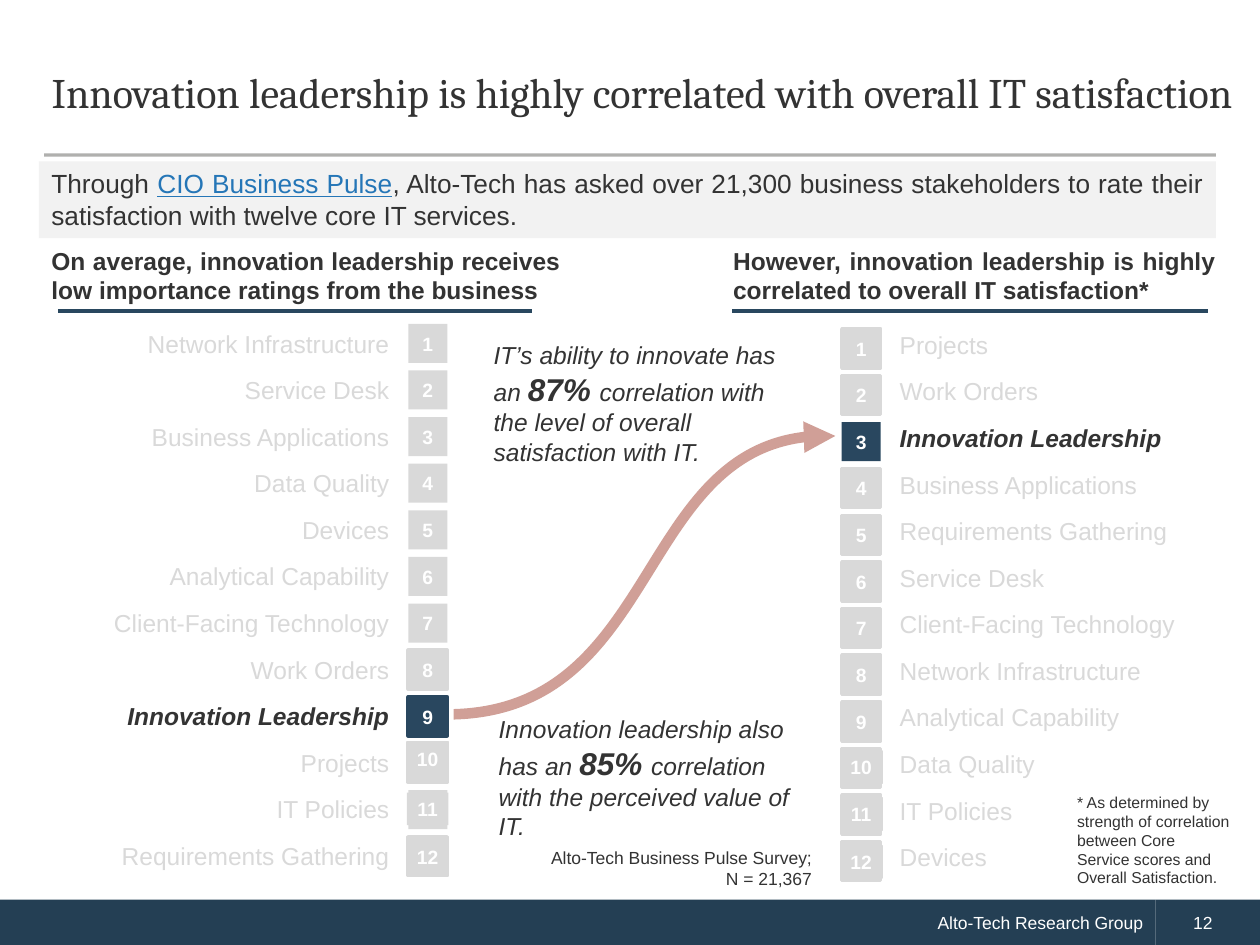
from dataclasses import dataclass, field

from lxml.etree import SubElement
from pptx import Presentation
from pptx.dml.color import RGBColor
from pptx.enum.shapes import MSO_CONNECTOR, MSO_SHAPE
from pptx.enum.text import MSO_ANCHOR as Anchor, MSO_AUTO_SIZE, PP_ALIGN as Align
from pptx.oxml.ns import qn
from pptx.util import Inches, Pt

TEXT, PALE, NAVY, FOOTER, WHITE = "333333", "D9D9D9", "29475F", "243F54", "FFFFFF"
ROW = 0.37
TILE = 0.31


@dataclass
class Run:
    text: str
    size: float = 14
    color: str = TEXT
    bold: bool = False
    italic: bool = False
    underline: bool = False
    font: str = "Arial"


@dataclass
class Ranking:
    services: list[str]
    table_at: tuple[float, float]
    table_w: float
    align: Align
    cell_inset: tuple[float, float]
    tile_at: tuple[float, float]
    tile_inset: float
    plain: set[int]  # ranks whose tile has no outline
    label_dy: dict[int, float] = field(default_factory=dict)


def rgb(color: str) -> RGBColor:
    return RGBColor.from_string(color)


def box_of(x: float, y: float, w: float, h: float) -> list:
    return [Inches(v) for v in (x, y, w, h)]


def write(tf, runs: list[Run], align: Align = Align.LEFT):
    """Fill the first paragraph run by run; a newline becomes a line break."""
    p = tf.paragraphs[0]
    p.alignment = align
    for run in runs:
        for i, line in enumerate(run.text.split("\n")):
            if i:
                p.add_line_break()
            r = p.add_run()
            r.text = line
            f = r.font
            f.name, f.size, f.color.rgb = run.font, Pt(run.size), rgb(run.color)
            f.bold, f.italic, f.underline = run.bold, run.italic, run.underline
    return p


def set_insets(tf, left: float, top: float, right: float, bottom: float) -> None:
    tf.margin_left, tf.margin_top = Inches(left), Inches(top)
    tf.margin_right, tf.margin_bottom = Inches(right), Inches(bottom)


def set_alpha(line, percent: int) -> None:
    clr = line.fill._xPr.find(qn("a:solidFill"))[0]
    SubElement(clr, qn("a:alpha"), val=str(percent * 1000))


def add_rect(shapes, at: tuple, fill: str, outline: float = 0):
    sp = shapes.add_shape(MSO_SHAPE.RECTANGLE, *box_of(*at))
    sp.shadow.inherit = False
    sp.fill.solid()
    sp.fill.fore_color.rgb = rgb(fill)
    if outline:
        sp.line.color.rgb = rgb(fill)
        sp.line.width = Pt(outline)
    else:
        sp.line.fill.background()
    return sp


def add_text(s, at: tuple, runs: list[Run], align: Align = Align.LEFT, right: float = 0.1) -> None:
    tf = s.shapes.add_textbox(*box_of(*at)).text_frame
    tf.word_wrap = True
    set_insets(tf, 0.1, 0.05, right, 0.05)
    write(tf, runs, align)


def add_rule(s, x1: float, x2: float, y: float, color: str, width: float):
    cn = s.shapes.add_connector(MSO_CONNECTOR.STRAIGHT, Inches(x1), Inches(y), Inches(x2), Inches(y))
    cn.line.color.rgb = rgb(color)
    cn.line.width = Pt(width)
    SubElement(cn._element.spPr, qn("a:effectLst"))
    return cn


def add_curve(s, start: tuple, c1: tuple, c2: tuple, end: tuple) -> None:
    """Draw a half-transparent Bezier arrow from start to end."""
    fb = s.shapes.build_freeform(Inches(start[0]), Inches(start[1]))
    fb.add_line_segments([(Inches(end[0]), Inches(end[1]))], close=False)
    sp = fb.convert_to_shape()
    sp.shadow.inherit = False
    sp.fill.background()
    sp.line.color.rgb = rgb("A24130")
    sp.line.width = Pt(6)
    set_alpha(sp.line, 50)
    SubElement(sp.line._ln, qn("a:tailEnd"), type="triangle")
    # Turn the straight segment into a cubic one
    segment = next(sp._element.iter(qn("a:lnTo")))
    segment.tag = qn("a:cubicBezTo")
    for i, (x, y) in enumerate((c1, c2)):
        pt = SubElement(segment, qn("a:pt"), x=str(Inches(x) - sp.left), y=str(Inches(y) - sp.top))
        segment.insert(i, pt)


def add_tile(s, rk: Ranking, rank: int, highlight: bool) -> None:
    x, y = rk.tile_at[0], rk.tile_at[1] + (rank - 1) * ROW
    fill = NAVY if highlight else PALE
    outline = 0 if rank in rk.plain else 2
    if rank < 10:
        sp = add_rect(s.shapes, (x, y, TILE, TILE), fill, outline)
    else:  # two-digit ranks carry a wider label over the square
        shapes = s.shapes.add_group_shape().shapes
        add_rect(shapes, (x, y, TILE, TILE), fill, outline)
        dy = rk.label_dy.get(rank, 0.02)
        sp = add_rect(shapes, (x - 0.01, y + dy, 0.33, 0.26), fill, outline and 0.75)
    tf = sp.text_frame
    tf.vertical_anchor = Anchor.MIDDLE
    set_insets(tf, rk.tile_inset, 0.05, rk.tile_inset, 0.05)
    write(tf, [Run(str(rank), 11, WHITE, bold=True)], Align.CENTER)


def add_ranking(s, rk: Ranking) -> None:
    n = len(rk.services)
    tbl = s.shapes.add_table(n, 1, *box_of(*rk.table_at, rk.table_w, n * ROW)).table
    tbl.first_row = tbl.horz_banding = False
    for i, service in enumerate(rk.services):
        tbl.rows[i].height = Inches(ROW)
        cell = tbl.cell(i, 0)
        cell.fill.background()
        cell.vertical_anchor = Anchor.MIDDLE
        side, vert = rk.cell_inset
        set_insets(cell, side, vert, side, vert)
        hot = service == "Innovation Leadership"
        write(cell.text_frame, [Run(service, 14, TEXT if hot else PALE, hot, hot)], rk.align)
        add_tile(s, rk, i + 1, hot)


BY_IMPORTANCE = Ranking(
    ["Network Infrastructure", "Service Desk", "Business Applications", "Data Quality",
     "Devices", "Analytical Capability", "Client-Facing Technology", "Work Orders",
     "Innovation Leadership", "Projects", "IT Policies", "Requirements Gathering"],
    (0.44, 2.55), 2.65, Align.RIGHT, (0, 0), (3.24, 2.57), 0.04,
    {1, 2, 3, 4, 5, 6, 7, 11}, {10: -0.01, 12: 0.03})
BY_CORRELATION = Ranking(
    ["Projects", "Work Orders", "Innovation Leadership", "Business Applications",
     "Requirements Gathering", "Service Desk", "Client-Facing Technology",
     "Network Infrastructure", "Analytical Capability", "Data Quality", "IT Policies", "Devices"],
    (7.04, 2.56), 2.73, Align.LEFT, (0.1, 0.05), (6.68, 2.61), 0, {3}, {12: 0.03})


def main() -> None:
    prs = Presentation()
    prs.slide_width, prs.slide_height = Inches(10), Inches(7.5)
    s = prs.slides.add_slide(prs.slide_layouts[5])

    # Title and rule
    title = s.shapes.title
    title.left, title.top, title.width, title.height = box_of(0.31, 0.28, 9.69, 0.94)
    tf = title.text_frame
    tf.auto_size, tf.vertical_anchor = MSO_AUTO_SIZE.NONE, Anchor.MIDDLE
    p = write(tf, [Run("Innovation leadership is highly correlated with overall IT satisfaction",
                       24, font="Cambria")])
    p.line_spacing = Pt(26)
    set_alpha(add_rule(s, 0.35, 9.65, 1.23, "45433E", 1.75).line, 42)

    # Footer
    for x, w, inset, text, align in ((0, 9.17, 0.39, "Alto-Tech Research Group", Align.RIGHT),
                                     (9.17, 0.83, 0.3, "12", Align.LEFT)):
        tf = add_rect(s.shapes, (x, 7.14, w, 0.37), FOOTER).text_frame
        set_insets(tf, inset, 0.05, 0.1, 0.05)
        write(tf, [Run(text, 10, WHITE)], align)

    # Arrow between the two ranks, then the rankings
    add_curve(s, (3.56, 5.67), (5.22, 5.66), (5.03, 3.39), (6.63, 3.46))
    add_rect(s.shapes, (3.27, 1.98, 0.33, 4.64), WHITE)
    for ranking in (BY_CORRELATION, BY_IMPORTANCE):
        add_ranking(s, ranking)

    # Column headings
    for x, w, x1, x2, text in (
            (0.31, 4.14, 0.46, 4.22, "On average, innovation leadership receives "
                                     "low importance ratings from the business"),
            (5.72, 3.93, 5.81, 9.59, "However, innovation leadership is highly "
                                     "correlated to overall IT satisfaction*")):
        add_rule(s, x1, x2, 2.47, NAVY, 2.5)
        add_text(s, (x, 1.9, w, 0.57), [Run(text, bold=True)], Align.JUSTIFY, right=0)

    # Correlation callouts
    for x, y, before, share, after in (
            (3.82, 2.65, "IT’s ability to innovate has an ", "87% ",
             "correlation with the level of overall satisfaction with IT."),
            (3.86, 5.62, "Innovation leadership also has an ", "85% ",
             "correlation with the perceived value of IT.")):
        add_text(s, (x, y, 2.54, 1.11), [Run(before, italic=True),
                                         Run(share, 18, bold=True, italic=True),
                                         Run(after, italic=True)])

    # Survey source and footnote
    add_text(s, (3.95, 6.67, 2.59, 0.44),
             [Run("Alto-Tech Business Pulse Survey;\nN = 21,367", 10)], Align.RIGHT)
    add_text(s, (8.45, 6.24, 1.42, 0.86),
             [Run("* As determined by strength of correlation between Core Service scores "
                  "and Overall Satisfaction.", 9)])

    # Introduction banner
    tf = add_rect(s.shapes, (0.31, 1.28, 9.34, 0.61), "F2F2F2").text_frame
    tf.vertical_anchor = Anchor.TOP
    write(tf, [Run("Through ", 15),
               Run("CIO Business Pulse", 15, "2576B7", underline=True),
               Run(", Alto-Tech has asked over 21,300 business stakeholders to rate their "
                   "satisfaction with twelve core IT services.", 15)], Align.JUSTIFY)

    prs.save("out.pptx")


if __name__ == "__main__":
    main()
